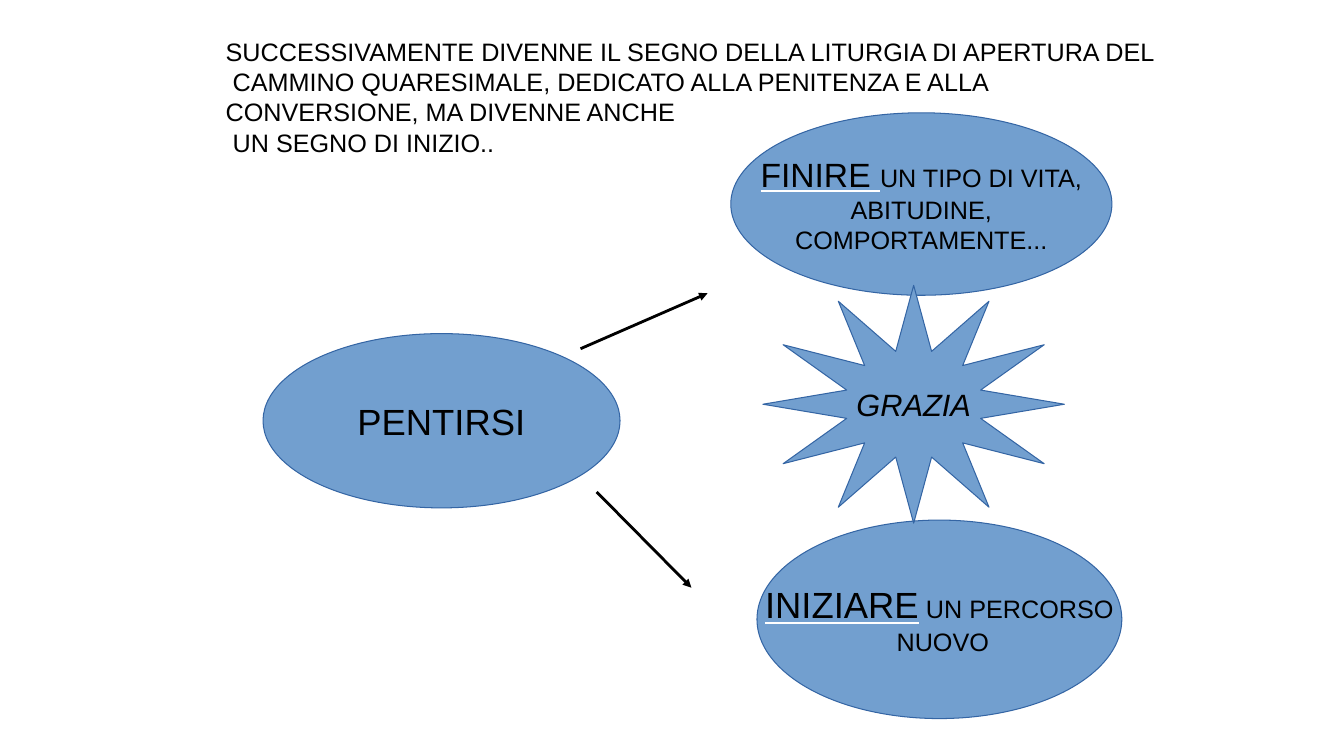
from pptx import Presentation
from pptx.dml.color import RGBColor
from pptx.enum.shapes import MSO_CONNECTOR as CONN, MSO_SHAPE as SHAPE
from pptx.enum.text import MSO_ANCHOR as ANCHOR, MSO_AUTO_SIZE as AUTO, PP_ALIGN as ALIGN
from pptx.oxml.ns import qn
from pptx.util import Pt
from lxml.etree import SubElement

BLACK = RGBColor(0x00, 0x00, 0x00)
WHITE = RGBColor(0xFF, 0xFF, 0xFF)
BLUE = RGBColor(0x72, 0x9F, 0xCF)
EDGE = RGBColor(0x34, 0x65, 0xA4)
FONT = "Arial"
HAIRLINE = Pt(0)
STAR_DEPTH = 0.23

TITLE_BOX = (154, 22.3, 686, 90)
TITLE = [
    [("SUCCESSIVAMENTE DIVENNE IL SEGNO DELLA LITURGIA DI APERTURA DEL", {})],
    [(" CAMMINO QUARESIMALE, DEDICATO ALLA PENITENZA E ALLA CONVERSIONE, MA DIVENNE ANCHE", {})],
    [(" UN SEGNO DI INIZIO..", {})],
]
ARROWS = [
    ((414.7, 249.1), (505.4, 209.5)),
    ((426.2, 351.4), (493.9, 419.8)),
]
SHAPES = [
    (SHAPE.OVAL, (187.9, 238.3, 255, 124.5), [[("PENTIRSI", {"size": 26})]]),
    (SHAPE.OVAL, (522, 80.6, 272.2, 130.3), [
        [("FINIRE ", {"size": 24, "underline": True}), ("UN TIPO DI VITA,", {})],
        [("ABITUDINE,", {})],
        [("COMPORTAMENTE...", {})],
    ]),
    (SHAPE.OVAL, (540.7, 371.5, 260.6, 141.8), [
        [("INIZIARE", {"size": 26, "underline": True}), (" UN PERCORSO", {})],
        [(" NUOVO", {})],
    ]),
    (SHAPE.STAR_12_POINT, (545, 203.8, 215.3, 169.9),
     [[("GRAZIA", {"size": 22, "italic": True})]]),
]


def add_run(p, text, size=18, italic=False, underline=False):
    r = p.add_run()
    r.text = text
    f = r.font
    f.size, f.bold, f.italic, f.underline = Pt(size), False, italic, underline
    f.color.rgb = BLACK
    if underline:
        fill = SubElement(SubElement(r._r.rPr, qn("a:uFill")), qn("a:solidFill"))
        SubElement(fill, qn("a:srgbClr"), val=str(WHITE))
    f.name = FONT


def write(sp, paragraphs, align, anchor, wrap):
    tf = sp.text_frame
    tf.word_wrap, tf.auto_size, tf.vertical_anchor = wrap, AUTO.NONE, anchor
    tf.margin_left = tf.margin_right = Pt(7.2)
    tf.margin_top = tf.margin_bottom = Pt(3.6)
    for i, runs in enumerate(paragraphs):
        p = tf.add_paragraph() if i else tf.paragraphs[0]
        p.alignment = align
        p.line_spacing = 1.0
        p.space_before = Pt(0)
        for text, style in runs:
            add_run(p, text, **style)


def add_arrow(s, start, end):
    c = s.shapes.add_connector(CONN.STRAIGHT, *map(Pt, start + end))
    c.line.color.rgb = BLACK
    c.line.width = HAIRLINE
    SubElement(c.line._get_or_add_ln(), qn("a:tailEnd"), type="triangle")
    SubElement(c._element.spPr, qn("a:effectLst"))


def add_figure(s, kind, box, paragraphs):
    sp = s.shapes.add_shape(kind, *map(Pt, box))
    sp.shadow.inherit = False
    sp.fill.solid()
    sp.fill.fore_color.rgb = BLUE
    sp.line.color.rgb = EDGE
    sp.line.width = HAIRLINE
    if kind == SHAPE.STAR_12_POINT:
        sp.adjustments[0] = STAR_DEPTH
    write(sp, paragraphs, ALIGN.CENTER, ANCHOR.MIDDLE, False)


def main():
    prs = Presentation()
    prs.slide_width, prs.slide_height = Pt(960), Pt(540)
    s = prs.slides.add_slide(prs.slide_layouts[5])
    title = s.shapes.title
    title.left, title.top, title.width, title.height = map(Pt, TITLE_BOX)
    write(title, TITLE, ALIGN.LEFT, ANCHOR.TOP, True)
    *ovals, star = SHAPES
    for oval in ovals:
        add_figure(s, *oval)
    for start, end in ARROWS:
        add_arrow(s, start, end)
    add_figure(s, *star)
    prs.save("out.pptx")


if __name__ == "__main__":
    main()
